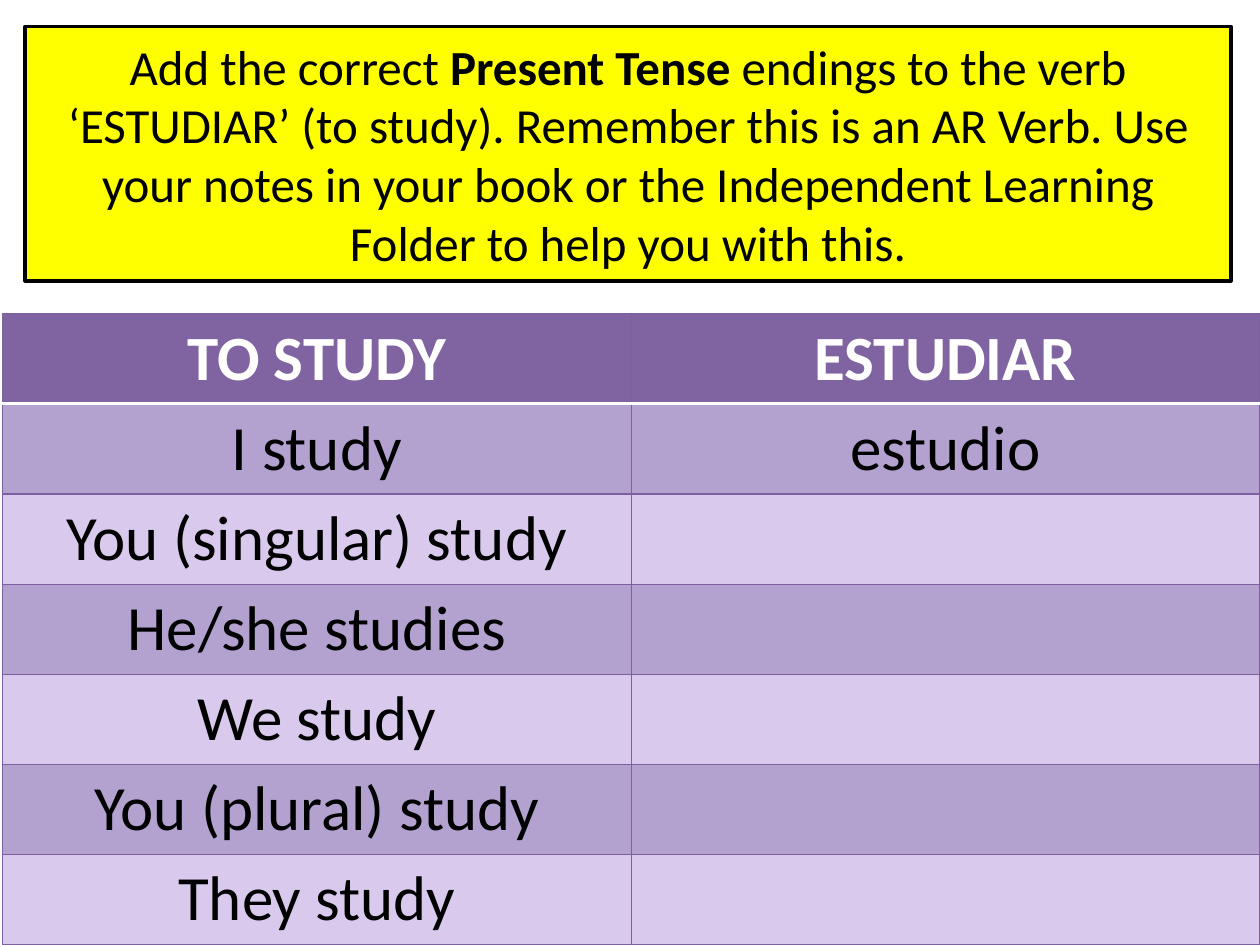
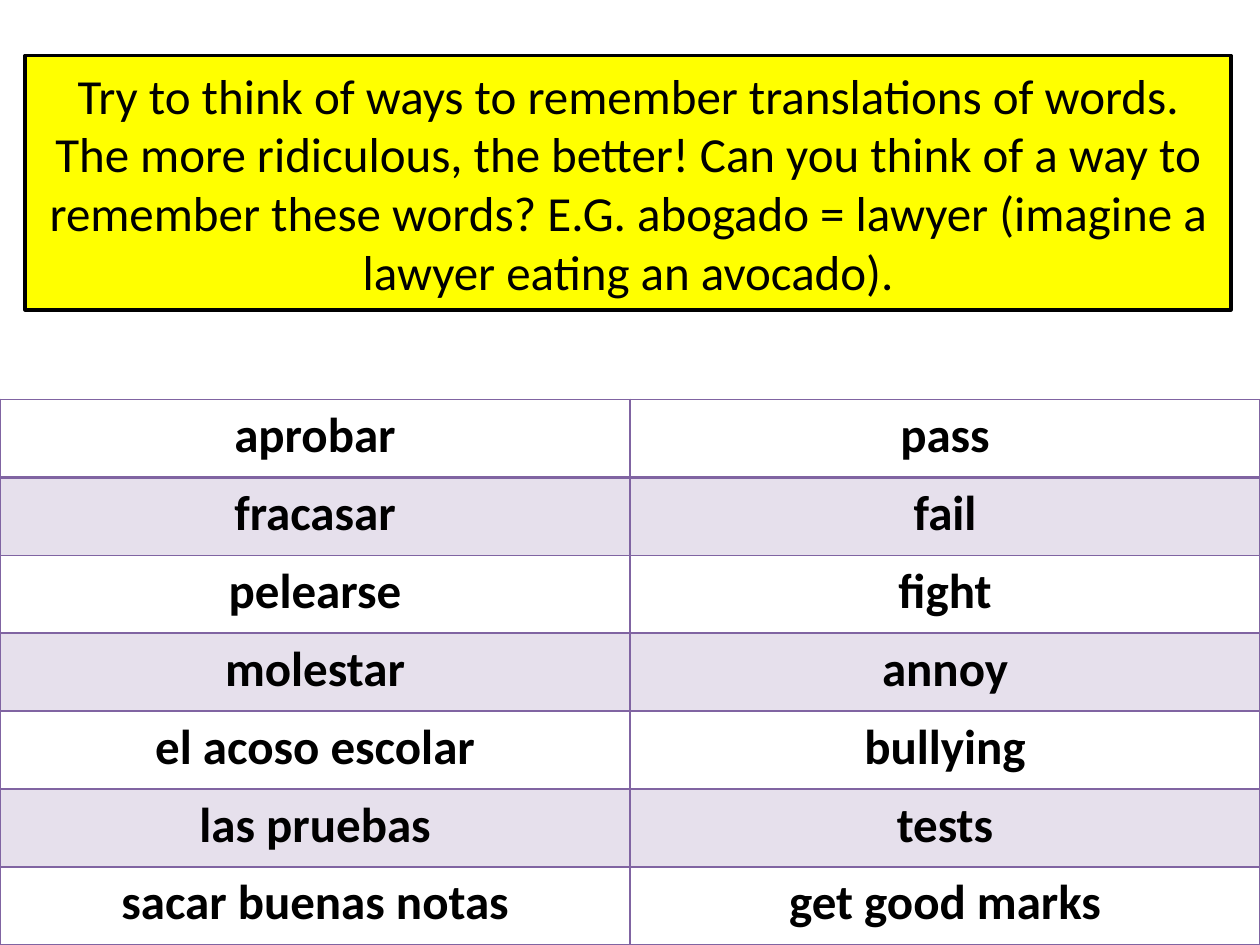
from lxml import etree
from pptx import Presentation, util as u
from pptx.dml.color import RGBColor
from pptx.enum import shapes, text
from pptx.oxml.ns import qn

INK = {
    "black": "000000", "white": "FFFFFF", "yellow": "FFFF00",
    "purple": "8064A2", "edge": "7D60A0",
    "mid": "B3A1CF", "light": "D9CAED", "pale": "E6E0EC",
}


def rgb(name):
    return RGBColor.from_string(INK[name])


def put(frame, *parts, size=28, color="black", bold=False):
    par = frame.paragraphs[0]
    par.alignment = text.PP_ALIGN.CENTER
    for part in parts:
        run = par.add_run()
        run.text = part.strip("*")
        font = run.font
        font.name, font.size = "Calibri", u.Pt(size)
        font.bold = bold or part.startswith("*")
        font.color.rgb = rgb(color)


pages = [
    dict(
        title=["Add the correct ", "*Present Tense *",
               "endings to the verb ‘ESTUDIAR’ (to study). Remember this is an AR Verb. "
               "Use your notes in your book or the Independent Learning Folder "
               "to help you with this."],
        top=0.21, left=0.02, start=2.49, size=36, bold=False,
        head=("purple", "white"), bands=("light", "mid"),
        edge="edge", width=0.75, rule="white",
        rows=[("TO STUDY", "ESTUDIAR"), ("I study", "estudio"),
              ("You (singular) study", ""), ("He/she studies", ""),
              ("We study", ""), ("You (plural) study", ""), ("They study", "")],
    ),
    dict(
        title=["Try to think of ways to remember translations of words. "
               "The more ridiculous, the better! Can you think of a way to remember "
               "these words? E.G. abogado = lawyer (imagine a lawyer eating an avocado)."],
        top=0.44, left=0, start=3.17, size=28, bold=True,
        head=("white", "black"), bands=("white", "pale"),
        edge="purple", width=1, rule="purple",
        rows=[("aprobar", "pass"), ("fracasar", "fail"), ("pelearse", "fight"),
              ("molestar", "annoy"), ("el acoso escolar", "bullying"),
              ("las pruebas", "tests"), ("sacar buenas notas", "get good marks")],
    ),
]

deck = Presentation()
deck.slide_width, deck.slide_height = u.Inches(10), u.Inches(7.5)

for page in pages:
    slide = deck.slides.add_slide(deck.slide_layouts[6])

    box = slide.shapes.add_shape(shapes.MSO_SHAPE.RECTANGLE, u.Inches(0.2),
                                 u.Inches(page["top"]), u.Inches(9.57), u.Inches(2.02))
    box.shadow.inherit = False
    box.fill.solid()
    box.fill.fore_color.rgb = rgb("yellow")
    box.line.color.rgb = rgb("black")
    box.line.width = u.Pt(2)
    box.text_frame.word_wrap = True
    box.text_frame.vertical_anchor = text.MSO_ANCHOR.MIDDLE
    put(box.text_frame, *page["title"])

    rows = page["rows"]
    grid = slide.shapes.add_table(
        len(rows), 2, u.Inches(page["left"]), u.Inches(page["start"]),
        u.Inches(10 - page["left"]), u.Inches(7.5 - page["start"])).table
    grid.first_row = grid.horz_banding = False

    for r, row in enumerate(rows):
        fill, color = page["head"] if r == 0 else (page["bands"][r % 2], "black")
        for c, word in enumerate(row):
            cell = grid.cell(r, c)
            props = cell._tc.get_or_add_tcPr()
            for side in "LRTB":
                ruled = (r, side) in ((0, "B"), (1, "T"))
                width = 2 if ruled else page["width"]
                line = etree.SubElement(props, qn("a:ln" + side), w=str(u.Pt(width)))
                paint = etree.SubElement(line, qn("a:solidFill"))
                etree.SubElement(paint, qn("a:srgbClr"),
                                 val=INK[page["rule" if ruled else "edge"]])
            cell.fill.solid()
            cell.fill.fore_color.rgb = rgb(fill)
            if word:
                put(cell.text_frame, word, size=page["size"], color=color,
                    bold=page["bold"] or r == 0)

deck.save("out.pptx")
